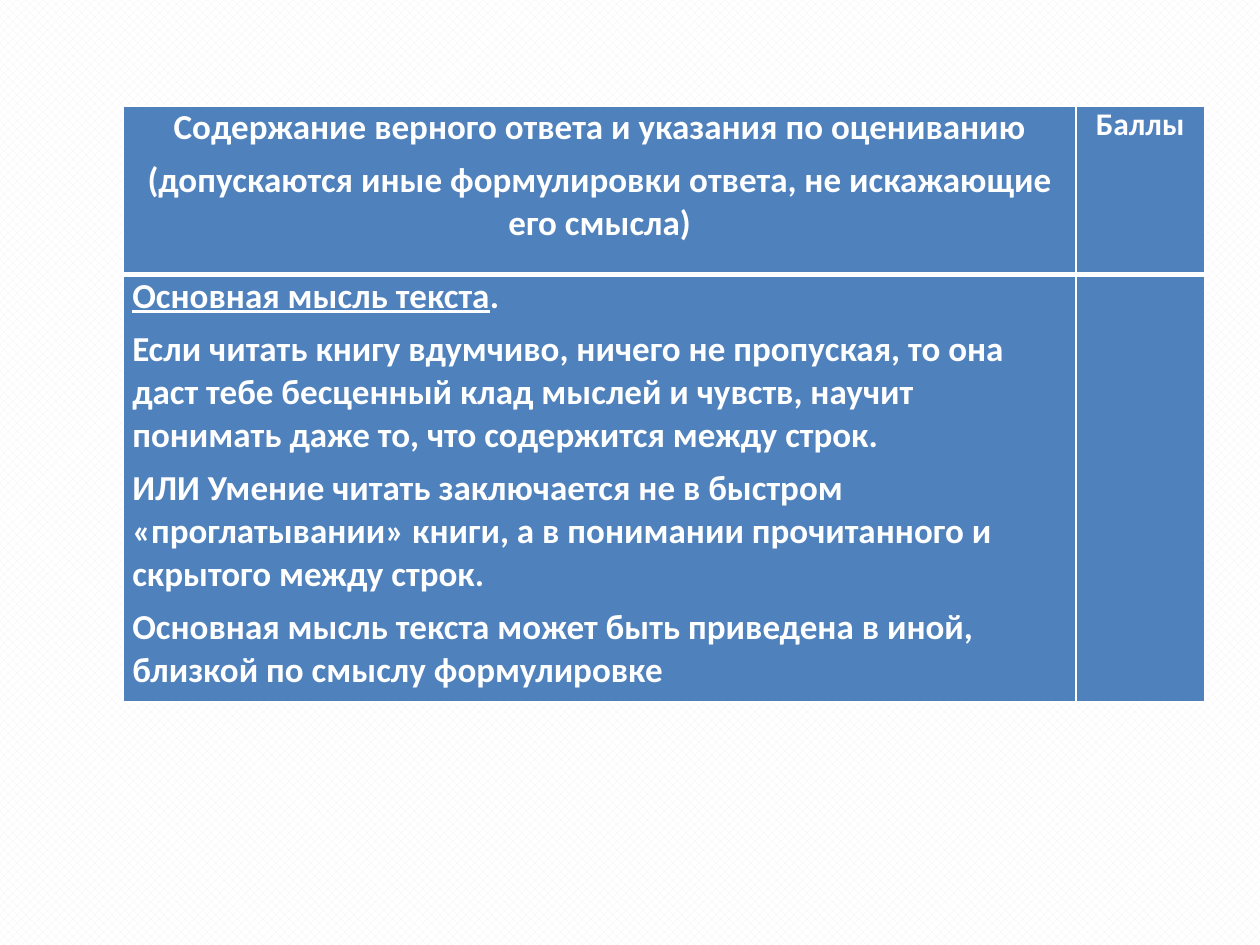
import pptx
import pptx.dml.color
import pptx.enum.dml
import pptx.enum.text
import pptx.oxml
import pptx.oxml.ns
import pptx.util

WHITE = pptx.dml.color.RGBColor(0xFF, 0xFF, 0xFF)
PALE_GREY = pptx.dml.color.RGBColor(0xF2, 0xF2, 0xF2)
BLUE = pptx.dml.color.RGBColor(0x4F, 0x81, 0xBD)

CENTER = pptx.enum.text.PP_ALIGN.CENTER
LEFT = pptx.enum.text.PP_ALIGN.LEFT

GRID_UNIT = pptx.util.Inches(0.1)
GRID_COLUMNS, GRID_ROWS = 100, 75
THIN, THICK = 1, 3

HEADING = {"alignment": CENTER, "space_before": pptx.util.Pt(6)}
POINTS = {"alignment": CENTER, "space_before": pptx.util.Pt(1.2)}
ANSWER = {"alignment": LEFT, "space_before": pptx.util.Pt(6)}

HEADING_TEXTS = [
    "Содержание верного ответа и указания по оцениванию",
    "(допускаются иные формулировки ответа, не искажающие его смысла)",
]
ANSWER_TEXTS = [
    "Если читать книгу вдумчиво, ничего не пропуская, то она даст тебе бесценный "
    "клад мыслей и чувств, научит понимать даже то, что содержится между строк.",
    "ИЛИ Умение читать заключается не в быстром «проглатывании» книги, "
    "а в понимании прочитанного и скрытого между строк.",
    "Основная мысль текста может быть приведена в иной, близкой по смыслу формулировке",
]


def apply(target, values):
    for name, value in values.items():
        setattr(target, name, value)


class SlideBuilder:
    """Holds the text style and the slide being built."""

    font = {"name": "Calibri", "bold": True}

    def __init__(self, presentation):
        self.slide = presentation.slides.add_slide(presentation.slide_layouts[6])

    def pattern_background(self, foreground, background):
        fill = self.slide.background.fill
        fill.patterned()
        fill.pattern = pptx.enum.dml.MSO_PATTERN.PERCENT_50
        fill.fore_color.rgb = foreground
        fill.back_color.rgb = background

    def table(self, left, top, widths, heights):
        """Add a blue table; all lengths are in grid units."""
        box = [int(length * GRID_UNIT) for length in (left, top, sum(widths), sum(heights))]
        table = self.slide.shapes.add_table(len(heights), len(widths), *box).table
        apply(table, {"first_row": False, "horz_banding": False})
        for column, width in zip(table.columns, widths):
            column.width = int(width * GRID_UNIT)
        for row, height in zip(table.rows, heights):
            row.height = int(height * GRID_UNIT)
        for cell in table.iter_cells():
            apply(cell, dict.fromkeys(
                ("margin_left", "margin_top", "margin_right", "margin_bottom"), 0))
            cell.fill.solid()
            cell.fill.fore_color.rgb = BLUE
        return table

    def borders(self, cell, top, bottom):
        """Draw white borders, thin at the sides, with widths in points."""
        properties = cell._tc.get_or_add_tcPr()
        sides = {"lnL": THIN, "lnR": THIN, "lnT": top, "lnB": bottom}
        for position, (side, width) in enumerate(sides.items()):
            line = pptx.oxml.parse_xml(
                f'<a:{side} {pptx.oxml.ns.nsdecls("a")} w="{pptx.util.Pt(width)}">'
                f'<a:solidFill><a:srgbClr val="{WHITE}"/></a:solidFill></a:{side}>')
            properties.insert(position, line)

    def cell_text(self, cell, paragraphs, layout, size, indents=(0, 0)):
        """Write paragraphs given as lists of (text, underline) runs."""
        frame = cell.text_frame
        for index, runs in enumerate(paragraphs):
            paragraph = frame.add_paragraph() if index else frame.paragraphs[0]
            apply(paragraph, layout)
            properties = paragraph._p.get_or_add_pPr()
            for name, indent in zip(("marL", "marR"), indents):
                properties.set(name, str(pptx.util.Inches(indent)))
            for text, underline in runs:
                run = paragraph.add_run()
                run.text = text
                apply(run.font, self.font | {"size": pptx.util.Pt(size), "underline": underline})
                run.font.color.rgb = WHITE


def plain(texts):
    return [[(text, False)] for text in texts]


def main():
    presentation = pptx.Presentation()
    presentation.slide_width = GRID_COLUMNS * GRID_UNIT
    presentation.slide_height = GRID_ROWS * GRID_UNIT

    builder = SlideBuilder(presentation)
    builder.pattern_background(PALE_GREY, WHITE)
    table = builder.table(9.8, 8.4, widths=(75.6, 10.2), heights=(13.4, 33.9))
    for column in range(len(table.columns)):
        builder.borders(table.cell(0, column), THIN, THICK)
        builder.borders(table.cell(1, column), THICK, THIN)

    main_idea = [("Основная мысль текста", True), (".", False)]
    builder.cell_text(table.cell(0, 0), plain(HEADING_TEXTS), HEADING, 20, (0.06, 0.06))
    builder.cell_text(table.cell(0, 1), plain(["Баллы"]), POINTS, 18)
    builder.cell_text(table.cell(1, 0), [main_idea] + plain(ANSWER_TEXTS), ANSWER, 20, (0.07, 0.3))

    presentation.save("out.pptx")


if __name__ == "__main__":
    main()
